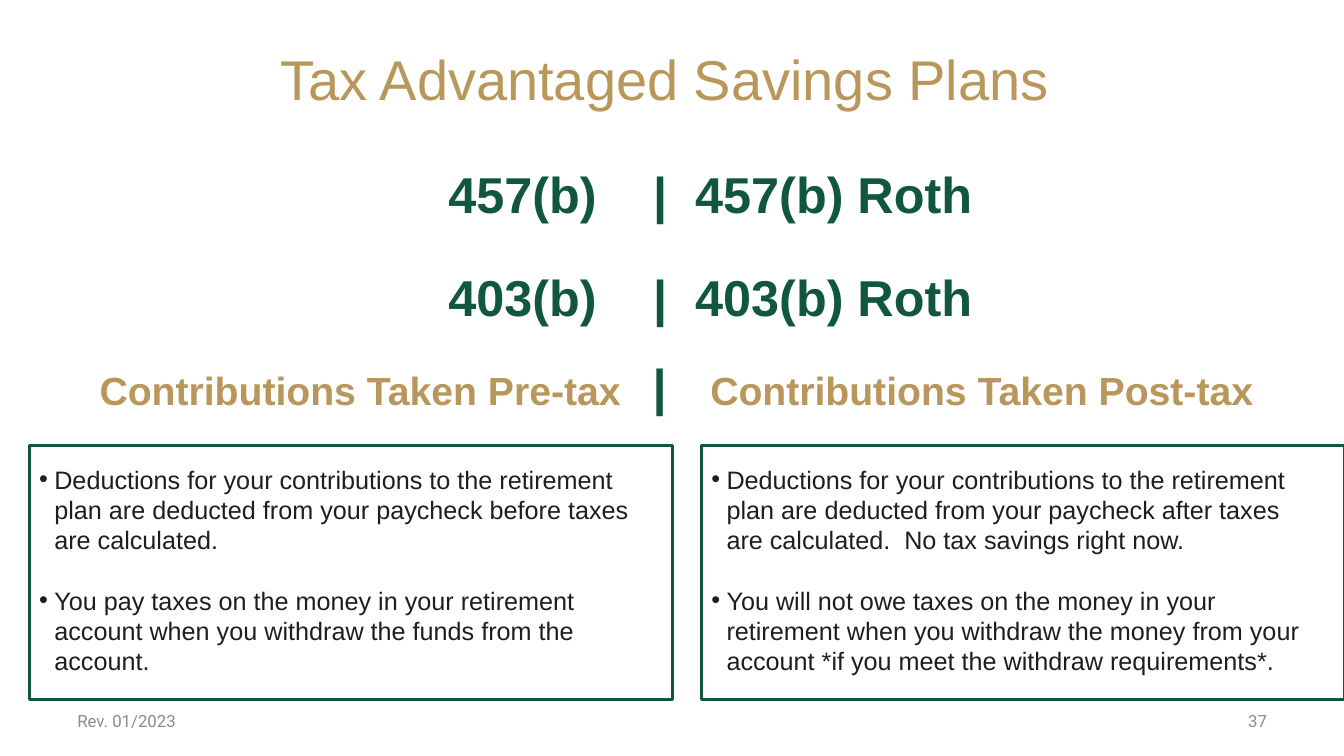
from pptx import Presentation
from pptx.dml.color import RGBColor
from pptx.enum.shapes import MSO_SHAPE
from pptx.enum.text import MSO_ANCHOR, PP_ALIGN
from pptx.oxml.ns import qn
from pptx.util import Cm, Pt
from lxml import etree

GOLD = RGBColor(0xB9, 0x97, 0x5B)
GREEN = RGBColor(0x11, 0x57, 0x40)
INK = RGBColor(0x1E, 0x1E, 0x1E)
GREY = RGBColor(0x8C, 0x8C, 0x8C)

RECT = MSO_SHAPE.RECTANGLE
TOP, MIDDLE = MSO_ANCHOR.TOP, MSO_ANCHOR.MIDDLE
LEFT, CENTER, RIGHT = PP_ALIGN.LEFT, PP_ALIGN.CENTER, PP_ALIGN.RIGHT

TITLE = dict(name="Arial", size=Pt(40), color=GOLD)
PLAN = dict(name="Arial", size=Pt(36), bold=True, color=GREEN)
HEADING = dict(name="Arial", size=Pt(28), bold=True, color=GOLD)
BODY = dict(name="Arial", size=Pt(18), color=INK)
FOOTER = dict(name="Roboto", size=Pt(12), color=GREY)

PLANS = ["457(b)", "403(b)"]
PRE_TAX = [
    ["Deductions for your contributions to the retirement",
     "plan are deducted from your paycheck before taxes",
     "are calculated."],
    ["You pay taxes on the money in your retirement",
     "account when you withdraw the funds from the",
     "account."],
]
POST_TAX = [
    ["Deductions for your contributions to the retirement",
     "plan are deducted from your paycheck after taxes",
     "are calculated.  No tax savings right now."],
    ["You will not owe taxes on the money in your",
     "retirement when you withdraw the money from your",
     "account *if you meet the withdraw requirements*."],
]


def add_run(p, text, fmt):
    r = p.add_run()
    r.text = text
    for key, value in fmt.items():
        if key == "color":
            r.font.color.rgb = value
        else:
            setattr(r.font, key, value)


def add_tabs(p, stops):
    tabs = etree.SubElement(p._p.get_or_add_pPr(), qn("a:tabLst"))
    for stop in stops:
        etree.SubElement(tabs, qn("a:tab"), pos=str(Cm(stop)), algn="l")


def add_bullet(p, indent):
    pPr = p._p.get_or_add_pPr()
    pPr.set("marL", str(Cm(indent)))
    pPr.set("indent", str(-Cm(indent)))
    etree.SubElement(pPr, qn("a:buFont"), typeface="Arial")
    etree.SubElement(pPr, qn("a:buChar"), char="•")


def add_box(s, left, top, width, height, **frame):
    sp = s.shapes.add_textbox(Cm(left), Cm(top), Cm(width), Cm(height))
    tf = sp.text_frame
    tf.word_wrap = True
    for key, value in frame.items():
        setattr(tf, key, value)
    return tf


def add_label(s, text, fmt, at, align):
    p = add_box(s, *at, vertical_anchor=MIDDLE).paragraphs[0]
    p.alignment = align
    add_run(p, text, fmt)


def add_plans(s):
    tf = add_box(s, 9.93, 3.86, 16.51, 4.83,
                 margin_left=Cm(1.37), margin_top=Cm(0.25))
    for i, plan in enumerate(PLANS):
        p = tf.add_paragraph() if i else tf.paragraphs[0]
        add_tabs(p, [5.16, 6.22])
        if i:
            p.space_before = Pt(30.6)
        add_run(p, f"{plan}\t|\t{plan} Roth", PLAN)


def add_headings(s):
    p = add_box(s, 2.26, 8.71, 31.8, 1.8, margin_top=Cm(0.25)).paragraphs[0]
    add_tabs(p, [13.94, 15.39])
    add_run(p, "Contributions Taken Pre-tax\t", HEADING)
    add_run(p, "|", PLAN)
    add_run(p, "\tContributions Taken Post-tax", HEADING)


def add_panel(s, left, points):
    sp = s.shapes.add_shape(RECT, Cm(left), Cm(11.23), Cm(16.21), Cm(6.4))
    sp.shadow.inherit = False
    sp.fill.background()
    sp.line.color.rgb = GREEN
    sp.line.width = Pt(2.25)
    tf = sp.text_frame
    tf.word_wrap = True
    tf.vertical_anchor = TOP
    tf.margin_top = Cm(0.46)
    for i, lines in enumerate(points):
        p = tf.add_paragraph() if i else tf.paragraphs[0]
        add_bullet(p, 0.38)
        p.alignment = LEFT
        p.line_spacing = Pt(21.6)
        if i:
            p.space_before = Pt(21.6)
        for j, line in enumerate(lines):
            if j:
                p.add_line_break()
            add_run(p, line, BODY)


def main():
    prs = Presentation()
    prs.slide_width, prs.slide_height = Cm(33.87), Cm(19.05)
    s = prs.slides.add_slide(prs.slide_layouts[6])
    add_label(s, "Tax Advantaged Savings Plans", TITLE,
              (1.5, 0.38, 30.48, 3.18), CENTER)
    add_plans(s)
    add_headings(s)
    add_panel(s, 0.74, PRE_TAX)
    add_panel(s, 17.68, POST_TAX)
    add_label(s, "Rev. 01/2023", FOOTER, (1.7, 17.65, 7.9, 1.02), LEFT)
    add_label(s, "37", FOOTER, (24.28, 17.65, 7.9, 1.02), RIGHT)
    prs.save("out.pptx")


if __name__ == "__main__":
    main()
